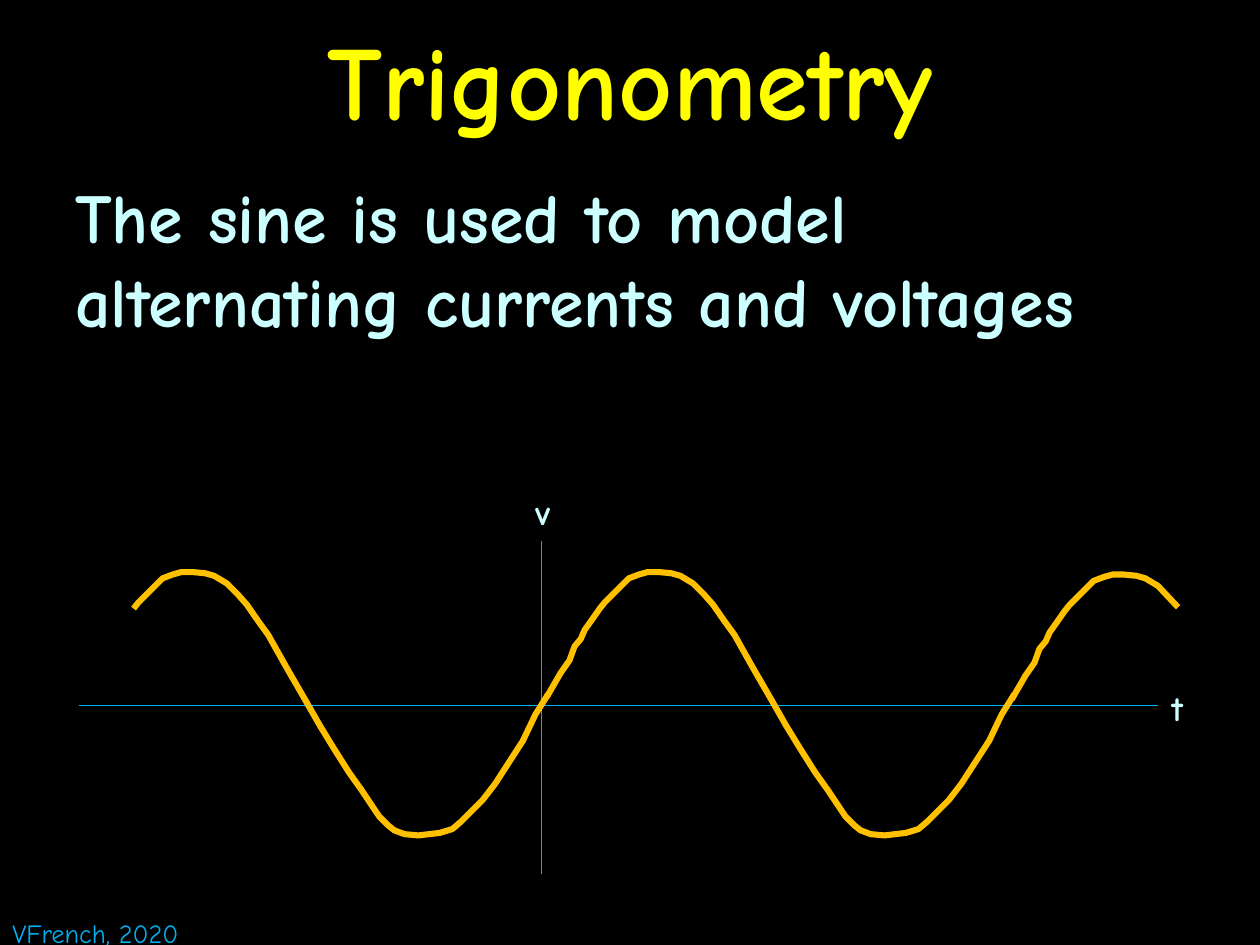
"""Build the trigonometry slide with a sine wave on v and t axes."""
from lxml import etree
from pptx import Presentation
from pptx import util as u
from pptx.dml import color
from pptx.enum import shapes, text
from pptx.oxml import ns

COLORS = {"back": "000000", "title": "FFFF00", "body": "CCFFFF",
          "axis": "00B0F0", "wave": "FFC000"}

PERIOD = 3.7
CYCLE = [
    (4.34, 5.53), (4.45, 5.34), (4.52, 5.24), (4.56, 5.13), (4.61, 5.07),
    (4.64, 5.0), (4.69, 4.93), (4.76, 4.83), (4.8, 4.78), (4.86, 4.72),
    (4.92, 4.66), (4.97, 4.61), (4.99, 4.59), (5.07, 4.56), (5.14, 4.54),
    (5.23, 4.54), (5.33, 4.55), (5.4, 4.57), (5.5, 4.63), (5.59, 4.72),
    (5.66, 4.8), (5.75, 4.93), (5.83, 5.04), (5.97, 5.29), (6.12, 5.55),
    (6.24, 5.76), (6.35, 5.94), (6.47, 6.13), (6.57, 6.27), (6.67, 6.42),
    (6.71, 6.48), (6.78, 6.55), (6.83, 6.59), (6.91, 6.62), (7.02, 6.63),
    (7.19, 6.61), (7.29, 6.58), (7.36, 6.52), (7.45, 6.43), (7.53, 6.35),
    (7.63, 6.22), (7.85, 5.88), (7.95, 5.67), (8.05, 5.51)]
WAVE_END = [(9.09, 4.59), (9.19, 4.65), (9.35, 4.82)]


def shifted(points, dx, dy=0):
    return [(x + dx, y + dy) for x, y in points]


class Deck:
    """Hold the style and the current slide."""

    def __init__(self, prs, font="Comic Neue"):
        self.font = font
        self.s = prs.slides.add_slide(prs.slide_layouts[5])
        fill = self.s.background.fill
        fill.solid()
        fill.fore_color.rgb = self.rgb("back")

    def rgb(self, name):
        return color.RGBColor.from_string(COLORS[name])

    def place(self, sp, box):
        for name, value in zip(("left", "top", "width", "height"), box):
            setattr(sp, name, u.Inches(value))

    def set_text(self, tf, words, size, hue, bold=True, wrap=True,
                 frame=None, para=None):
        tf.text = words
        p = tf.paragraphs[0]
        r = p.runs[0]
        formats = (
            (tf, {"word_wrap": wrap, "auto_size": text.MSO_AUTO_SIZE.NONE,
                  **(frame or {})}),
            (p, para or {}),
            (r.font, {"name": self.font, "size": u.Pt(size), "bold": bold}))
        for target, values in formats:
            for name, value in values.items():
                setattr(target, name, value)
        r.font.color.rgb = self.rgb(hue)

    def title(self, words, box):
        sp = self.s.shapes.title
        self.place(sp, box)
        self.set_text(sp.text_frame, words, 60, "title",
                      frame={"vertical_anchor": text.MSO_ANCHOR.MIDDLE},
                      para={"alignment": text.PP_ALIGN.CENTER})

    def label(self, words, box, size, hue="body", **kw):
        sp = self.s.shapes.add_textbox(*map(u.Inches, box))
        self.set_text(sp.text_frame, words, size, hue, **kw)

    def stroke(self, sp, hue, width):
        sp.line.color.rgb = self.rgb(hue)
        sp.line.width = u.Pt(width)

    def axis(self, *ends):
        sp = self.s.shapes.add_connector(
            shapes.MSO_CONNECTOR.STRAIGHT, *map(u.Inches, ends))
        self.stroke(sp, "axis", 0.75)
        etree.SubElement(sp._element.spPr, ns.qn("a:effectLst"))

    def curve(self, points):
        points = [(u.Inches(x), u.Inches(y)) for x, y in points]
        fb = self.s.shapes.build_freeform(*points[0])
        fb.add_line_segments(points[1:], close=False)
        sp = fb.convert_to_shape()
        sp.fill.background()
        sp.shadow.inherit = False
        self.stroke(sp, "wave", 3.5)


def main():
    prs = Presentation()
    prs.slide_width, prs.slide_height = u.Inches(10), u.Inches(7.5)
    deck = Deck(prs)
    deck.title("Trigonometry", (0, 0, 10, 1.25))
    deck.label("The sine is used to model alternating currents and voltages",
               (0.5, 1.33, 9, 6.17), 40, para={"space_before": u.Pt(8)})
    deck.label("VFrench, 2020", (0, 7.23, 1.72, 0.35), 15, "axis",
               bold=False, wrap=False)
    deck.label("t", (9.2, 5.4, 0.33, 0.44), 20)
    deck.axis(4.3, 4.29, 4.3, 6.94)
    deck.axis(9.19, 5.6, 0.63, 5.6)
    deck.curve(CYCLE)
    deck.curve(shifted(CYCLE[7:], -PERIOD))
    deck.curve(shifted(CYCLE[:17], PERIOD - 0.01, 0.02) + WAVE_END)
    deck.label("v", (4.15, 3.84, 0.43, 0.44), 20)
    prs.save("out.pptx")


if __name__ == "__main__":
    main()
